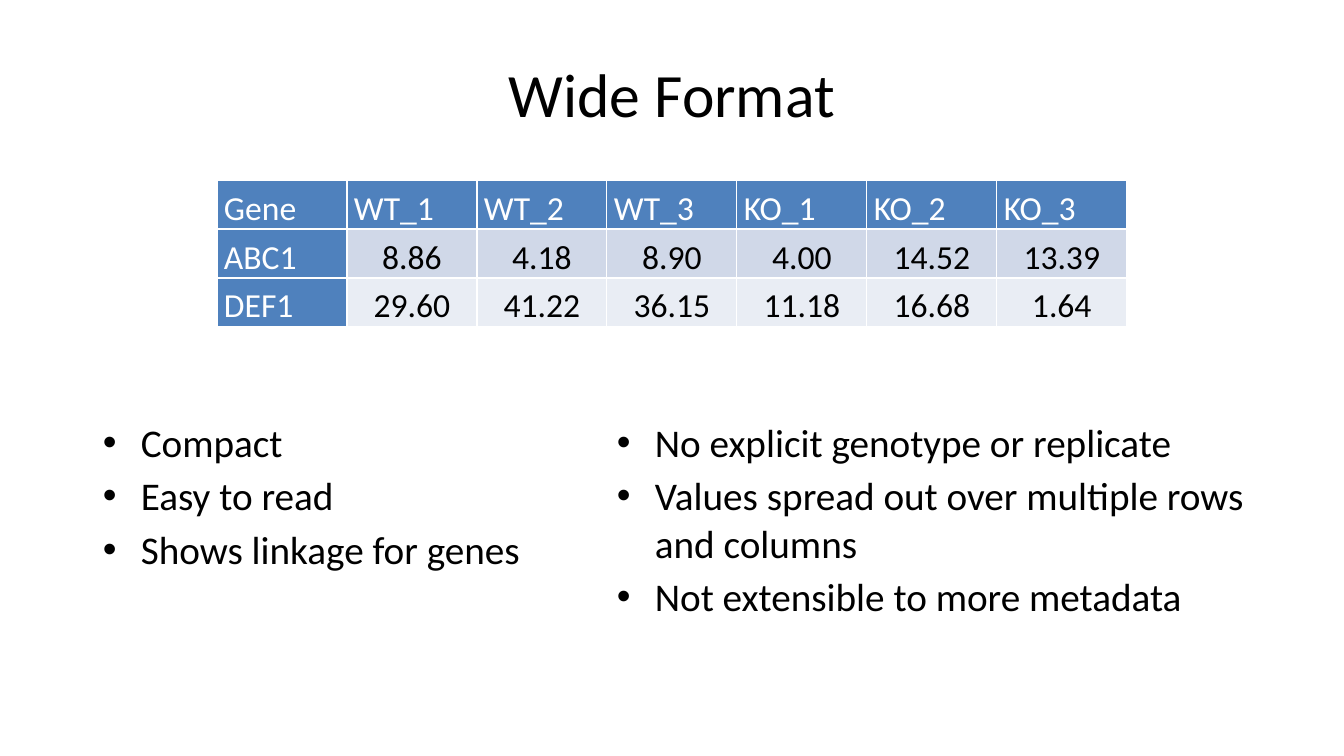
from lxml.etree import SubElement
from pptx import Presentation
from pptx.dml.color import RGBColor
from pptx.enum.text import MSO_ANCHOR, PP_ALIGN
from pptx.oxml.ns import qn
from pptx.util import Emu, Pt

BLACK, WHITE, BLUE = "000000", "FFFFFF", "4F81BD"
BANDS = ["D0D8E8", "E9EDF4"]


def px(count):
    return Emu(round(count * 914400 / 100.8))


def add_text(paragraph, text, size, color):
    run = paragraph.add_run()
    run.text = text
    run.font.name = "Calibri"
    run.font.size = Pt(size)
    run.font.color.rgb = RGBColor.from_string(color)


deck = Presentation()
deck.slide_width, deck.slide_height = px(1344), px(756)
slide = deck.slides.add_slide(deck.slide_layouts[6])

# Title
title = slide.shapes.add_textbox(px(67), px(30), px(1210), px(126)).text_frame
title.word_wrap = True
title.vertical_anchor = MSO_ANCHOR.MIDDLE
title.paragraphs[0].alignment = PP_ALIGN.CENTER
add_text(title.paragraphs[0], "Wide Format", 44, BLACK)

# Expression table: one row per gene, one column per sample
expression = [
    ["Gene", "WT_1", "WT_2", "WT_3", "KO_1", "KO_2", "KO_3"],
    ["ABC1", "8.86", "4.18", "8.90", "4.00", "14.52", "13.39"],
    ["DEF1", "29.60", "41.22", "36.15", "11.18", "16.68", "1.64"],
]
rows, columns = len(expression), len(expression[0])
table = slide.shapes.add_table(
    rows, columns, px(217), px(180), px(130 * columns), px(49 * rows)).table
for row, values in enumerate(expression):
    for column, value in enumerate(values):
        is_header = row == 0 or column == 0
        cell = table.cell(row, column)
        cell.margin_left = cell.margin_right = px(7)
        cell.margin_top = cell.margin_bottom = 0
        cell.vertical_anchor = MSO_ANCHOR.BOTTOM

        # White borders go before the fill in the cell properties
        for side in ("lnL", "lnR", "lnT", "lnB"):
            border = SubElement(cell._tc.get_or_add_tcPr(), qn(f"a:{side}"), w=str(Pt(1)))
            border_fill = SubElement(border, qn("a:solidFill"))
            SubElement(border_fill, qn("a:srgbClr"), val=WHITE)
        cell.fill.solid()
        cell.fill.fore_color.rgb = RGBColor.from_string(BLUE if is_header else BANDS[row - 1])

        paragraph = cell.text_frame.paragraphs[0]
        paragraph.line_spacing = 1.2
        paragraph.alignment = PP_ALIGN.LEFT if is_header else PP_ALIGN.CENTER
        add_text(paragraph, value, 24, WHITE if is_header else BLACK)

# Advantages on the left, drawbacks on the right
advantages = ["Compact", "Easy to read", "Shows linkage for genes"]
drawbacks = [
    "No explicit genotype or replicate",
    "Values spread out over multiple rows and columns",
    "Not extensible to more metadata",
]
for left, width, height, points in [(93, 482, 188, advantages), (607, 678, 243, drawbacks)]:
    bullets = slide.shapes.add_textbox(px(left), px(413), px(width), px(height)).text_frame
    bullets.word_wrap = True
    for index, point in enumerate(points):
        paragraph = bullets.add_paragraph() if index else bullets.paragraphs[0]
        paragraph.space_before = Pt(4.8)
        properties = paragraph._p.get_or_add_pPr()
        properties.set("marL", str(px(38)))
        properties.set("indent", str(-px(38)))
        SubElement(properties, qn("a:buFont"), typeface="Arial")
        SubElement(properties, qn("a:buChar"), char="•")
        add_text(paragraph, point, 28, BLACK)

deck.save("out.pptx")
